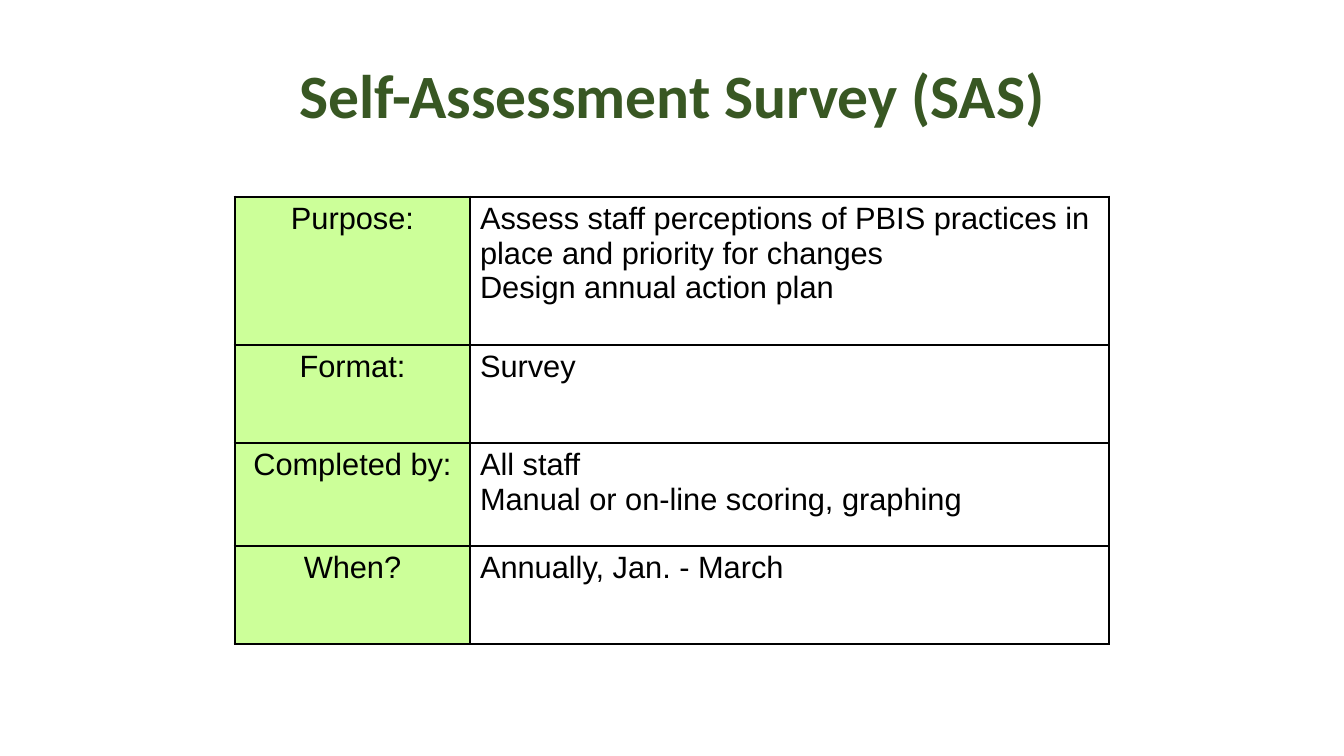
"""Build the Self-Assessment Survey slide: a title over a bordered fact table."""
from lxml import etree
from pptx import Presentation, util as u
from pptx.dml.color import RGBColor
from pptx.enum import text
from pptx.oxml.ns import qn

TITLE = "Self-Assessment Survey (SAS)"
FACTS = [
    ("Purpose:", "Assess staff perceptions of PBIS practices in place and priority for changes\n"
                 "Design annual action plan"),
    ("Format:", "Survey"),
    ("Completed by:", "All staff\nManual or on-line scoring, graphing"),
    ("When?", "Annually, Jan. - March"),
]
THEME = {
    "title": {"font": "Calibri", "size": 44, "color": "385723", "bold": True},
    "body": {"font": "Arial", "size": 22, "color": "000000", "bold": False},
    "label": "CCFF99", "rule": "000000", "thick": 2.25, "thin": 1,
}
PAGE = (1344, 756)
HEAD = (219, 40, 907, 118)
LEFT, TOP = 235, 197
COLS = (235, 639)
ROWS = (148, 98, 103, 98)


def px(n):
    return u.Emu(round(n * 914400 / 100.8))


def style(para, look, align):
    para.alignment = align
    for run in para.runs:
        font = run.font
        font.name, font.size, font.bold = look["font"], u.Pt(look["size"]), look["bold"]
        font.color.rgb = RGBColor.from_string(look["color"])


def border(cell, outer):
    props = cell._tc.get_or_add_tcPr()
    for i, (side, edge) in enumerate(zip("LRTB", outer)):
        width = u.Pt(THEME["thick" if edge else "thin"])
        line = etree.Element(qn(f"a:ln{side}"), w=str(width))
        fill = etree.SubElement(line, qn("a:solidFill"))
        etree.SubElement(fill, qn("a:srgbClr"), val=THEME["rule"])
        props.insert(i, line)


def add_title(slide):
    frame = slide.shapes.add_textbox(*map(px, HEAD)).text_frame
    frame.word_wrap = True
    frame.vertical_anchor = text.MSO_ANCHOR.MIDDLE
    frame.text = TITLE
    para = frame.paragraphs[0]
    para.line_spacing = 0.9
    style(para, THEME["title"], text.PP_ALIGN.CENTER)


def add_facts(slide):
    box = (LEFT, TOP, sum(COLS), sum(ROWS))
    table = slide.shapes.add_table(len(ROWS), len(COLS), *map(px, box)).table
    table.first_row = table.horz_banding = False
    for col, width in zip(table.columns, COLS):
        col.width = px(width)
    for r, (row, height) in enumerate(zip(table.rows, ROWS)):
        row.height = px(height)
        for c, cell in enumerate(row.cells):
            cell.text_frame.text = FACTS[r][c]
            if c == 0:
                cell.fill.solid()
                cell.fill.fore_color.rgb = RGBColor.from_string(THEME["label"])
            else:
                cell.fill.background()
            align = text.PP_ALIGN.LEFT if c else text.PP_ALIGN.CENTER
            for para in cell.text_frame.paragraphs:
                style(para, THEME["body"], align)
            border(cell, (c == 0, c == len(COLS) - 1, r == 0, r == len(ROWS) - 1))


def main():
    deck = Presentation()
    deck.slide_width, deck.slide_height = map(px, PAGE)
    slide = deck.slides.add_slide(deck.slide_layouts[6])
    add_title(slide)
    add_facts(slide)
    deck.save("out.pptx")


if __name__ == "__main__":
    main()
